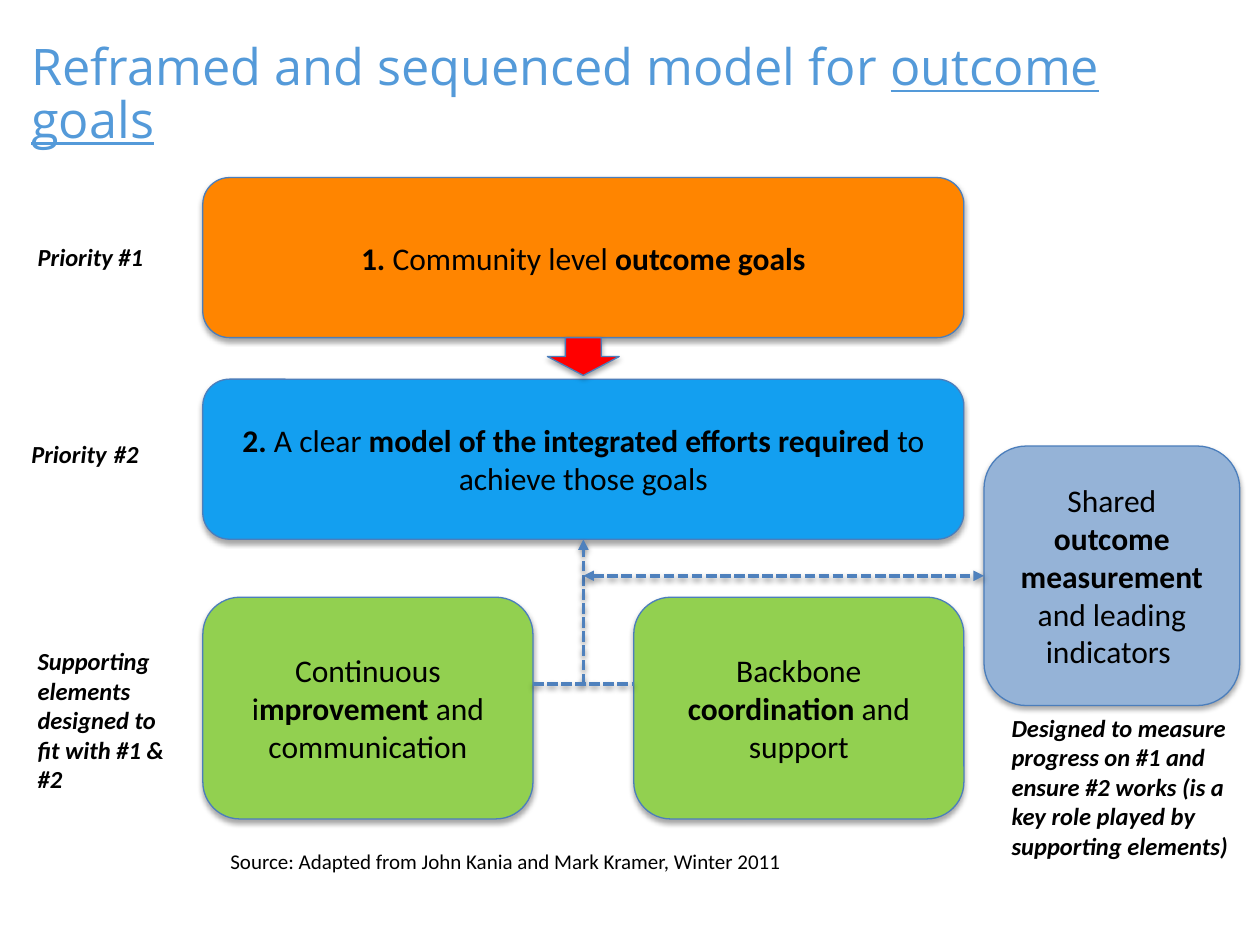
import pptx
import pptx.util
import pptx.dml.color
import pptx.enum.dml
import pptx.enum.shapes
import pptx.enum.text
import pptx.oxml
import pptx.oxml.ns

Inches = pptx.util.Inches
Pt = pptx.util.Pt
SHAPES = pptx.enum.shapes.MSO_SHAPE
ALIGN = pptx.enum.text.PP_ALIGN
ANCHOR = pptx.enum.text.MSO_ANCHOR
BOLD = {"bold": True}
LABEL = {"size": Pt(14), "bold": True, "italic": True}


def color(hex_string):
    return pptx.dml.color.RGBColor.from_string(hex_string)


def add_shadow(shape, opacity, distance):
    properties = shape._element.spPr
    for old in properties.findall(pptx.oxml.ns.qn("a:effectLst")):
        properties.remove(old)
    properties.append(pptx.oxml.parse_xml(
        f'<a:effectLst {pptx.oxml.ns.nsdecls("a")}>'
        f'<a:outerShdw blurRad="{Pt(3.1)}" dist="{Pt(distance)}" dir="5400000" rotWithShape="0">'
        f'<a:srgbClr val="000000"><a:alpha val="{opacity * 1000}"/></a:srgbClr>'
        '</a:outerShdw></a:effectLst>'))


def write_runs(paragraph, runs, **base):
    """Write (text, format) pairs; each format overrides the base values."""
    for text, values in runs:
        run = paragraph.add_run()
        run.text = text
        font_values = {"name": "Calibri", "size": Pt(18), "color": "000000", **base, **values}
        run.font.color.rgb = color(font_values.pop("color"))
        for name, value in font_values.items():
            setattr(run.font, name, value)


def add_text(slide, box, runs, wrap=True, anchor=ANCHOR.TOP, spacing=1.0, **base):
    frame = slide.shapes.add_textbox(*map(Inches, box)).text_frame
    frame.word_wrap = wrap
    frame.vertical_anchor = anchor
    frame.paragraphs[0].line_spacing = spacing
    write_runs(frame.paragraphs[0], runs, **base)


def add_block(slide, box, fill, runs=(), kind=SHAPES.ROUNDED_RECTANGLE):
    shape = slide.shapes.add_shape(kind, *map(Inches, box))
    shape.fill.solid()
    shape.fill.fore_color.rgb = color(fill)
    shape.line.color.rgb = color("4B7EBC")
    shape.line.width = Pt(0.75)
    shape.shadow.inherit = False
    add_shadow(shape, 35, 1.8)
    frame = shape.text_frame
    frame.word_wrap = True
    frame.vertical_anchor = ANCHOR.MIDDLE
    frame.paragraphs[0].alignment = ALIGN.CENTER
    write_runs(frame.paragraphs[0], runs)
    return shape


def add_dashed_line(slide, start, end, arrows=(), target=None, site=0):
    connector = slide.shapes.add_connector(
        pptx.enum.shapes.MSO_CONNECTOR.STRAIGHT, *map(Inches, start + end))
    if target is not None:
        connector.end_connect(target, site)
    connector.line.color.rgb = color("4F81BD")
    connector.line.width = Pt(2)
    connector.line.dash_style = pptx.enum.dml.MSO_LINE.SQUARE_DOT
    outline = connector.line._get_or_add_ln()
    for arrow in arrows:
        outline.append(pptx.oxml.parse_xml(
            f'<a:{arrow} {pptx.oxml.ns.nsdecls("a")} type="triangle"/>'))
    add_shadow(connector, 38, 1.6)


def add_title(slide, box):
    add_text(slide, box, [("Reframed and sequenced model for ", {}),
                          ("outcome goals", {"underline": True})],
             anchor=ANCHOR.MIDDLE, spacing=0.87,
             name="Open Sans", size=Pt(28.8), color="549AD9")


def add_priorities(slide, box):
    """Stack the two priorities with an arrow between; return the lower one."""
    left, top, width, height = box
    block_height, arrow_width = 1.27, 0.57
    add_block(slide, (left, top, width, block_height), "FF8500",
              [("1. ", BOLD), ("Community level ", {}), ("outcome goals", BOLD)])
    model = add_block(
        slide, (left, top + height - block_height, width, block_height), "139FF0",
        [("2. ", BOLD), ("A clear ", {}),
         ("model of the integrated efforts required", BOLD),
         (" to achieve those goals", {})])
    add_block(slide, (left + (width - arrow_width) / 2, top + block_height, arrow_width, 0.3),
              "FF0000", kind=SHAPES.DOWN_ARROW)
    return model


def add_supporting_elements(slide, box):
    left, top, width, height = box
    block_width = 2.62
    blocks = [
        [("Continuous i", {}), ("mprovement", BOLD), (" and communication", {})],
        [("Backbone ", {}), ("coordination", BOLD), (" and support", {})],
    ]
    for index, runs in enumerate(blocks):
        block_left = left + index * (width - block_width)
        add_block(slide, (block_left, top, block_width, height), "92D050", runs)


def add_measurement(slide, box):
    return add_block(slide, box, "95B3D7", [
        ("Shared ", {}), ("outcome measurement", BOLD), (" and leading indicators ", {})])


def add_links(slide, model, measurement):
    center, junction, branch = 4.63, 5.43, 4.57
    add_dashed_line(slide, (center, junction), (center, 4.28), ["tailEnd"], model, 2)
    add_dashed_line(slide, (4.23, junction), (5.03, junction))
    add_dashed_line(slide, (center, branch), (7.81, branch),
                    ["headEnd", "tailEnd"], measurement, 1)


def add_side_labels(slide):
    labels = [
        ((0.2, 1.87, 1.31, 0.34), [("Priority #1", {})]),
        ((0.15, 3.38, 1.31, 0.4),
         [("Priority", {}), (" ", {"size": Pt(18), "bold": False}), ("#2", {})]),
        ((0.2, 5.08, 1.27, 1.28),
         [("Supporting elements designed to fit with #1 & #2", {})]),
        ((7.93, 5.61, 2.07, 1.28),
         [("Designed to measure progress on #1 and ensure #2 works "
           "(is a key role played by supporting elements)", {})]),
    ]
    for box, runs in labels:
        add_text(slide, box, runs, **LABEL)


def main():
    presentation = pptx.Presentation()
    presentation.slide_width = Inches(10)
    presentation.slide_height = Inches(7.5)
    slide = presentation.slides.add_slide(presentation.slide_layouts[6])

    add_title(slide, (0.15, 0.28, 9.69, 0.97))
    # Source line
    add_text(slide, (1.73, 6.72, 4.61, 0.27),
             [("Source: Adapted from John Kania and Mark Kramer, Winter 2011", {})],
             wrap=False, spacing=0.8, size=Pt(12))
    # Model blocks and the links between them
    model = add_priorities(slide, (1.61, 1.41, 6.04, 2.87))
    measurement = add_measurement(slide, (7.81, 3.54, 2.03, 2.06))
    add_supporting_elements(slide, (1.61, 4.74, 6.04, 1.76))
    add_links(slide, model, measurement)
    add_side_labels(slide)

    presentation.save("out.pptx")


if __name__ == "__main__":
    main()
